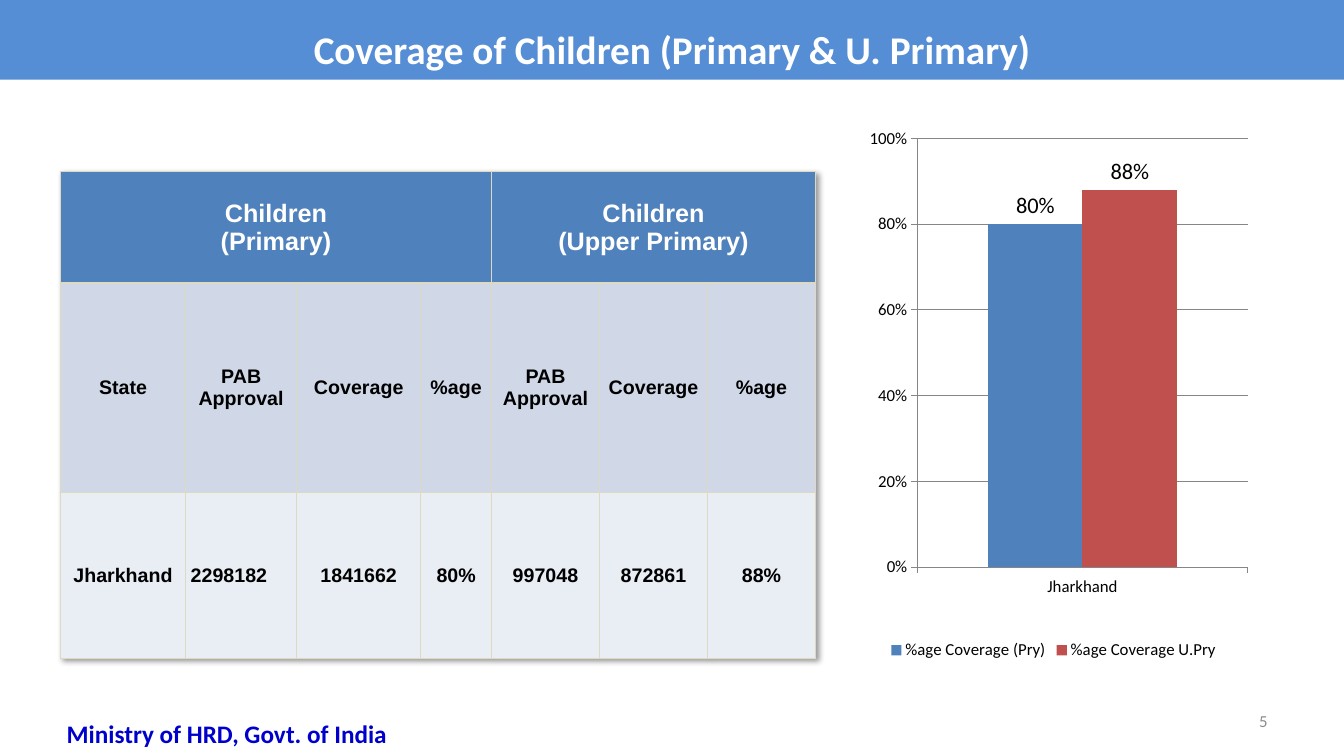
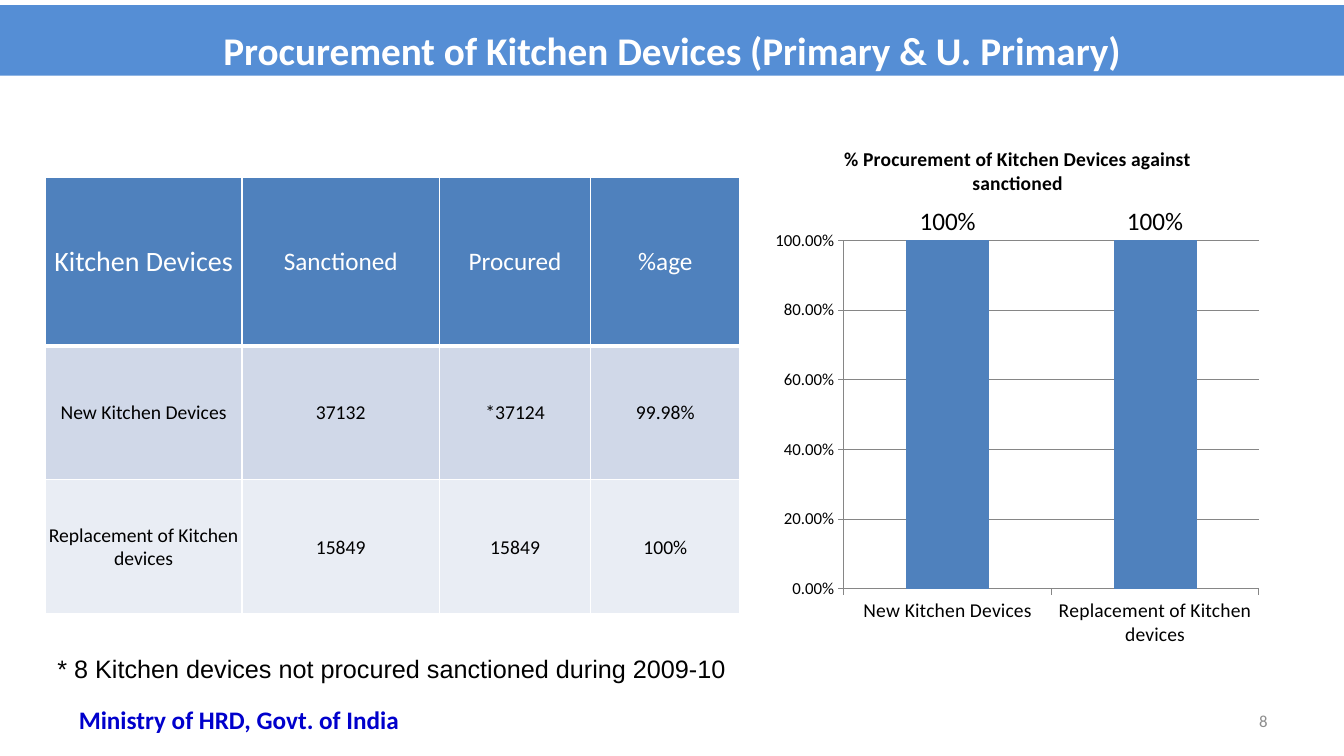
"""Builds two slides on coverage of children and kitchen devices."""
from dataclasses import dataclass

from lxml import etree
from pptx import Presentation
from pptx import util as u
from pptx.chart import data
from pptx.dml import color
from pptx.enum import chart as ch, text
from pptx.oxml import ns


@dataclass(frozen=True)
class Theme:
    """Colours, fonts and type sizes of the deck."""
    band: str = "558ED5"
    blue: str = "4F81BD"
    red: str = "C0504D"
    pale: str = "D0D8E8"
    light: str = "E9EDF4"
    sand: str = "DDD9C3"
    white: str = "FFFFFF"
    black: str = "000000"
    navy: str = "0000CC"
    grey: str = "8C8C8C"
    line: str = "868686"
    face: str = "Calibri"
    plain: str = "Arial"
    title: int = 28
    large: int = 20
    head: int = 18
    label: int = 16
    body: int = 14
    small: int = 12


T = Theme()
LEFT, MID, RIGHT = (text.PP_ALIGN.LEFT, text.PP_ALIGN.CENTER,
                    text.PP_ALIGN.RIGHT)
CENTRE = text.MSO_ANCHOR.MIDDLE


def rgb(tone):
    """Turn a hex string into a colour."""
    return color.RGBColor.from_string(tone)


def paint(fill, tone):
    """Make a fill solid in one colour."""
    fill.solid()
    fill.fore_color.rgb = rgb(tone)


def style(font, size, tone=T.black, bold=False, face=T.face):
    """Set the look of a font."""
    font.size, font.bold, font.name = u.Pt(size), bold, face
    font.color.rgb = rgb(tone)


def write(frame, words, side=LEFT, lead=None, **look):
    """Fill a text frame, one paragraph a line."""
    frame.word_wrap = True
    for n, line in enumerate(words.split("\n")):
        para = frame.add_paragraph() if n else frame.paragraphs[0]
        para.alignment, para.line_spacing = side, lead
        run = para.add_run()
        run.text = line
        style(run.font, **look)


def label(slide, box, words, anchor=text.MSO_ANCHOR.TOP, **look):
    """Place a text box."""
    frame = slide.shapes.add_textbox(*map(u.Inches, box)).text_frame
    frame.vertical_anchor = anchor
    write(frame, words, **look)


def banner(slide, box, words):
    """Turn the title into a coloured band."""
    head = slide.shapes.title
    head.left, head.top, head.width, head.height = map(u.Inches, box)
    paint(head.fill, T.band)
    frame = head.text_frame
    frame.auto_size = text.MSO_AUTO_SIZE.NONE
    frame.vertical_anchor = CENTRE
    write(frame, words, side=MID, lead=1.4, size=T.title, tone=T.white,
          bold=True)


def footer(slide, spot, page):
    """Place the source line and the page number."""
    label(slide, (*spot, 3.92, 0.4), "Ministry of HRD, Govt. of India",
          side=MID, size=T.head, tone=T.navy, bold=True)
    label(slide, (9.56, 6.95, 3.11, 0.4), page, anchor=CENTRE, side=RIGHT,
          size=T.small, tone=T.grey)


def node(root, tag, **attrs):
    """Add an XML child with attributes."""
    item = etree.SubElement(root, ns.qn(tag))
    for key, val in attrs.items():
        item.set(key, str(val))
    return item


def solid(root, tone):
    """Add a solid colour to an XML element."""
    return node(node(root, "a:solidFill"), "a:srgbClr", val=tone)


def border(cell, tone, top=1, base=1):
    """Rule all four sides of a cell."""
    props = cell._tc.get_or_add_tcPr()
    for side, width in zip("LRTB", (1, 1, top, base)):
        solid(node(props, f"a:ln{side}", w=u.Pt(width)), tone)


def shadow(table):
    """Cast a soft shadow to the lower right of a table."""
    props = table._tbl.tblPr
    group = node(props, "a:effectLst")
    props.insert(0, group)
    cast = node(group, "a:outerShdw", blurRad=u.Pt(4), dist=u.Pt(3),
                dir=2700000, algn="tl", rotWithShape=0)
    node(node(cast, "a:srgbClr", val=T.black), "a:alpha", val=40000)


def grid(slide, box, cols, tall, rows, edge, rule=1, spans=(), tweak=None,
         **look):
    """Place a table whose columns and rows share the box by weight."""
    table = slide.shapes.add_table(len(rows), len(cols),
                                   *map(u.Inches, box)).table
    table.first_row = table.horz_banding = False
    for col, part in zip(table.columns, cols):
        col.width = u.Inches(box[2] * part / sum(cols))
    for row, part in zip(table.rows, tall):
        row.height = u.Inches(box[3] * part / sum(tall))
    fills = (T.blue, T.pale, T.light)
    for r, row in enumerate(rows):
        for c, words in enumerate(row):
            cell = table.cell(r, c)
            border(cell, edge, rule if r == 1 else 1, rule if r == 0 else 1)
            paint(cell.fill, fills[r])
            form = {"side": MID, "size": T.body if r else T.head,
                    "tone": T.black if r else T.white, "pad": 0.01,
                    **look, **(tweak or {}).get((r, c), {})}
            cell.margin_left = u.Inches(form.pop("pad"))
            cell.margin_right = cell.margin_top = u.Inches(0.01)
            cell.margin_bottom = 0
            cell.vertical_anchor = CENTRE
            if words:
                write(cell.text_frame, words, **form)
    for r, first, last in spans:
        table.cell(r, first).merge(table.cell(r, last))
    return table


def inset(chart, area):
    """Fix the inner plot area as shares of the chart."""
    plot = chart.element.find(".//" + ns.qn("c:plotArea"))
    for old in plot.findall(ns.qn("c:layout")):
        plot.remove(old)
    frame = node(plot, "c:layout")
    plot.insert(0, frame)
    rules = node(frame, "c:manualLayout")
    node(rules, "c:layoutTarget", val="inner")
    for tag in ("xMode", "yMode"):
        node(rules, f"c:{tag}", val="edge")
    for tag, share in zip("xywh", area):
        node(rules, f"c:{tag}", val=share)


def columns(slide, box, cats, sets, area, ticks, mark, small, title=None):
    """Place a column chart of shares from 0 to 100%."""
    feed = data.CategoryChartData()
    feed.categories = cats
    for name, vals in sets:
        feed.add_series(name, vals)
    chart = slide.shapes.add_chart(ch.XL_CHART_TYPE.COLUMN_CLUSTERED,
                                   *map(u.Inches, box), feed).chart
    style(chart.font, T.small)
    chart.has_title = bool(title)
    if title:
        write(chart.chart_title.text_frame, title, side=MID, size=T.body,
              bold=True)
    chart.has_legend = len(sets) > 1
    if chart.has_legend:
        chart.legend.position = ch.XL_LEGEND_POSITION.BOTTOM
        chart.legend.include_in_layout = False
    plot = chart.plots[0]
    plot.gap_width, plot.overlap, plot.vary_by_categories = 150, 0, False
    for bars, tone in zip(plot.series, (T.blue, T.red)):
        paint(bars.format.fill, tone)
        tags = bars.data_labels
        tags.show_value = True
        tags.number_format, tags.number_format_is_linked = "0%", False
        tags.position = ch.XL_LABEL_POSITION.OUTSIDE_END
        style(tags.font, mark)
    axis, base = chart.value_axis, chart.category_axis
    axis.minimum_scale, axis.maximum_scale, axis.major_unit = 0, 1, 0.2
    axis.tick_labels.number_format = ticks
    axis.tick_labels.number_format_is_linked = False
    axis.has_major_gridlines = True
    style(axis.tick_labels.font, T.small)
    style(base.tick_labels.font, small)
    for line in (axis.format.line, base.format.line,
                 axis.major_gridlines.format.line):
        line.color.rgb, line.width = rgb(T.line), u.Pt(0.75)
    inset(chart, area)


def pupils(slide):
    """Build the slide on children covered."""
    banner(slide, (0, 0, 13.33, 0.79), "Coverage of Children (Primary & U. Primary)")
    columns(slide, (8.4, 0.92, 4.1, 5.67), ["Jharkhand"],
            [("%age Coverage (Pry)", [0.8]), ("%age Coverage U.Pry", [0.88])],
            (0.17, 0.08, 0.8, 0.75), "0%", T.label, T.small)
    heads = ["PAB Approval", "Coverage", "%age"]
    table = grid(
        slide, (0.6, 1.7, 7.49, 4.83),
        (1.24, 1.1, 1.23, 0.7, 1.07, 1.07, 1.07), (1.11, 2.08, 1.65),
        [["Children\n(Primary)", "", "", "", "Children\n(Upper Primary)", "", ""],
         ["State", *heads, *heads],
         ["Jharkhand", "2298182", "1841662", "80%", "997048", "872861", "88%"]],
        T.sand, spans=((0, 0, 3), (0, 4, 6)),
        tweak={(2, 1): {"side": LEFT, "pad": 0.05}}, bold=True, face=T.plain)
    shadow(table)
    footer(slide, (0.29, 7.08), "5")


def tools(slide):
    """Build the slide on kitchen devices."""
    banner(slide, (0, 0.05, 13.33, 0.7),
           "Procurement of Kitchen Devices (Primary & U. Primary)")
    kinds = ["New Kitchen Devices", "Replacement of Kitchen devices"]
    grid(slide, (0.45, 1.76, 6.89, 4.33), (1.95, 1.96, 1.5, 1.48),
         (1.67, 1.33, 1.33),
         [["Kitchen Devices", "Sanctioned", "Procured", "%age"],
          [kinds[0], "37132", "*37124", "99.98%"],
          [kinds[1], "15849", "15849", "100%"]],
         T.white, rule=3, tweak={(0, 0): {"size": T.large}})
    columns(slide, (7.69, 1.25, 4.8, 5.17), kinds, [("Series 1", [1, 1])],
            (0.14, 0.22, 0.86, 0.67), "0.00%", T.head, T.body,
            "% Procurement of Kitchen Devices against sanctioned")
    footer(slide, (0.41, 6.94), "8")
    label(slide, (0.47, 6.43, 6.89, 0.4),
          "* 8 Kitchen devices not procured sanctioned during 2009-10",
          size=T.head, face=T.plain)


def main():
    """Build and save the deck."""
    deck = Presentation()
    deck.slide_width, deck.slide_height = u.Inches(13.33), u.Inches(7.5)
    for build in (pupils, tools):
        build(deck.slides.add_slide(deck.slide_layouts[5]))
    deck.save("out.pptx")


if __name__ == "__main__":
    main()
